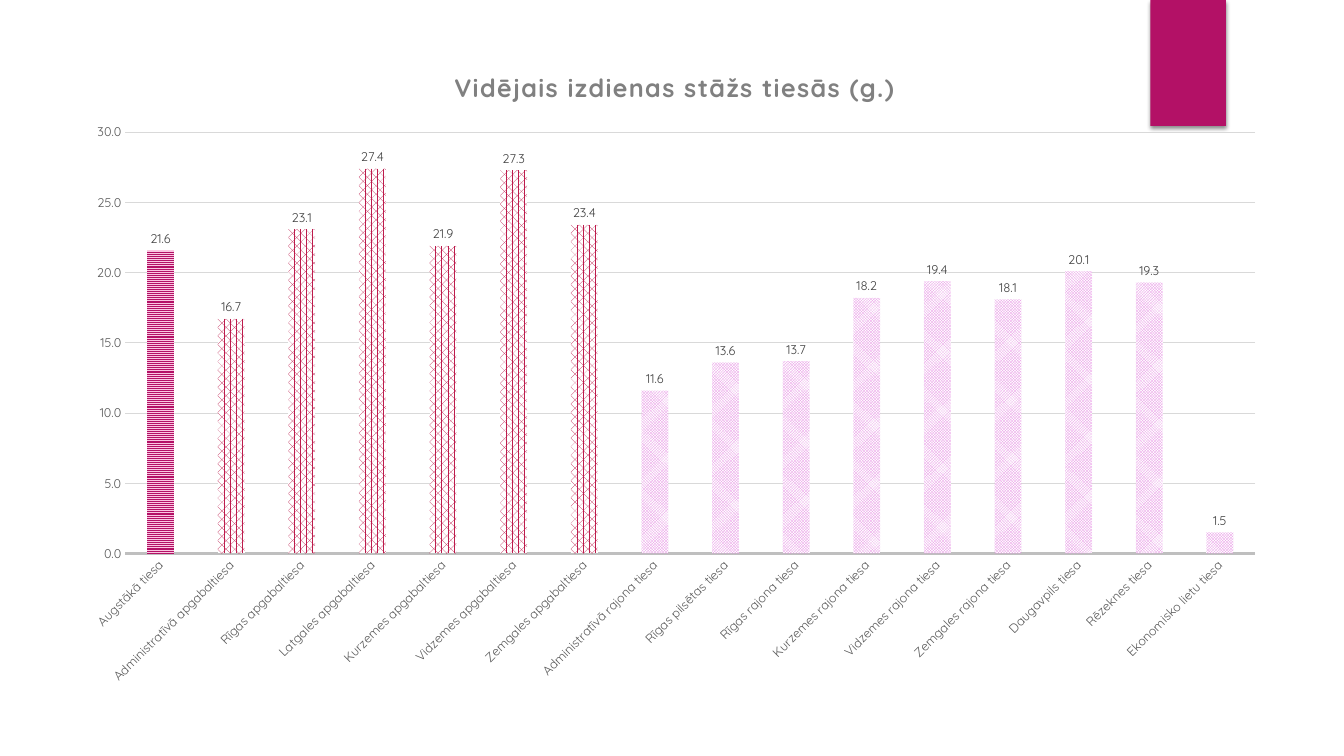
from pptx import Presentation
from pptx.chart.data import CategoryChartData
from pptx.dml.color import RGBColor
from pptx.enum.chart import XL_CHART_TYPE, XL_LABEL_POSITION, XL_TICK_MARK
from pptx.enum.dml import MSO_PATTERN
from pptx.enum.shapes import MSO_SHAPE
from pptx.oxml import parse_xml
from pptx.oxml.ns import nsdecls
from pptx.util import Inches, Pt

COLUMN = XL_CHART_TYPE.COLUMN_CLUSTERED
OUTSIDE = XL_LABEL_POSITION.OUTSIDE_END
NO_TICK = XL_TICK_MARK.NONE
LINES = MSO_PATTERN.NARROW_HORIZONTAL
DOTS = MSO_PATTERN.PERCENT_60
CHECKS = MSO_PATTERN.SMALL_CHECKER_BOARD

FONT = "Quicksand"
COLORS = {
    "accent": "B31166", "blush": "FAC6E1", "red": "BD1B4C", "pink": "E68BE3",
    "white": "FFFFFF", "black": "000000", "title": "808080", "axis": "595959",
    "label": "404040", "base": "BFBFBF", "grid": "D9D9D9",
}
TITLE = "Vidējais izdienas stāžs tiesās (g.)"
# Each group of courts: pattern, front colour, back colour, (court, years)
GROUPS = [
    (LINES, "accent", "blush", [("Augstākā tiesa", 21.6)]),
    (DOTS, "red", "white", [
        ("Administratīvā apgabaltiesa", 16.7),
        ("Rīgas apgabaltiesa", 23.1),
        ("Latgales apgabaltiesa", 27.4),
        ("Kurzemes apgabaltiesa", 21.9),
        ("Vidzemes apgabaltiesa", 27.3),
        ("Zemgales apgabaltiesa", 23.4),
    ]),
    (CHECKS, "pink", "white", [
        ("Administratīvā rajona tiesa", 11.6),
        ("Rīgas pilsētas tiesa", 13.6),
        ("Rīgas rajona tiesa", 13.7),
        ("Kurzemes rajona tiesa", 18.2),
        ("Vidzemes rajona tiesa", 19.4),
        ("Zemgales rajona tiesa", 18.1),
        ("Daugavpils tiesa", 20.1),
        ("Rēzeknes tiesa", 19.3),
        ("Ekonomisko lietu tiesa", 1.5),
    ]),
]
PLOT = {"x": 0.046, "y": 0.132, "w": 0.934, "h": 0.647}


def rgb(name):
    return RGBColor.from_string(COLORS[name])


def style(font, size, color, bold=False):
    font.name, font.size, font.bold = FONT, Pt(size), bold
    font.color.rgb = rgb(color)


def rule(line, color, width):
    line.color.rgb = rgb(color)
    line.width = Pt(width)


def hatch(fill, pattern, front, back):
    fill.patterned()
    fill.pattern = pattern
    fill.fore_color.rgb = rgb(front)
    fill.back_color.rgb = rgb(back)


def add_tab(slide):
    tab = slide.shapes.add_shape(
        MSO_SHAPE.RECTANGLE, Inches(11.41), 0, Inches(0.75), Inches(1.25))
    tab.fill.solid()
    tab.fill.fore_color.rgb = rgb("accent")
    tab.line.fill.background()
    tab.shadow.inherit = False
    tab._element.spPr.remove(tab._element.spPr[-1])
    tab._element.spPr.append(parse_xml(
        f'<a:effectLst {nsdecls("a")}><a:outerShdw blurRad="{Pt(3)}" '
        f'dist="{Pt(2)}" dir="5400000" rotWithShape="0"><a:srgbClr '
        f'val="{COLORS["black"]}"><a:alpha val="45000"/></a:srgbClr>'
        '</a:outerShdw></a:effectLst>'))


def place_plot(chart):
    """Fix the inner plot area and make the chart background clear."""
    area = chart._chartSpace.chart.plotArea
    for old in area.findall("{*}layout"):
        area.remove(old)
    sizes = "".join(f'<c:{k} val="{v}"/>' for k, v in PLOT.items())
    area.insert(0, parse_xml(
        f'<c:layout {nsdecls("c")}><c:manualLayout>'
        '<c:layoutTarget val="inner"/><c:xMode val="edge"/>'
        f'<c:yMode val="edge"/>{sizes}</c:manualLayout></c:layout>'))
    chart._chartSpace.chart.addnext(parse_xml(
        f'<c:spPr {nsdecls("c", "a")}><a:noFill/>'
        '<a:ln><a:noFill/></a:ln></c:spPr>'))


def add_chart(slide):
    data = CategoryChartData(number_format="0.0")
    courts = [court for group in GROUPS for court in group[3]]
    data.categories = [name for name, _ in courts]
    data.add_series(TITLE, [years for _, years in courts])
    chart = slide.shapes.add_chart(
        COLUMN, Inches(0.69), Inches(0.46), Inches(12), Inches(6.46),
        data).chart
    style(chart.font, 10, "black")
    chart.has_legend = False
    chart.has_title = True
    para = chart.chart_title.text_frame.paragraphs[0]
    para.text = TITLE
    run = para.runs[0]
    style(run.font, 18, "title", True)
    run._r.get_or_add_rPr().set("spc", "100")

    cats, vals = chart.category_axis, chart.value_axis
    for axis in (cats, vals):
        axis.major_tick_mark = axis.minor_tick_mark = NO_TICK
        style(axis.tick_labels.font, 9, "axis")
    rule(cats.format.line, "base", 1.5)
    cats._element.txPr.bodyPr.set("rot", "-2700000")
    vals.format.line.fill.background()
    rule(vals.major_gridlines.format.line, "grid", 0.75)
    vals.minimum_scale, vals.maximum_scale, vals.major_unit = 0, 30, 5
    vals.tick_labels.number_format = "0.0"
    vals.tick_labels.number_format_is_linked = False

    plot = chart.plots[0]
    plot.vary_by_categories = False
    plot.gap_width, plot.overlap = 164, -22
    bars = plot.series[0]
    bars.invert_if_negative = False
    hatch(bars.format.fill, *GROUPS[0][:3])
    start = len(GROUPS[0][3])
    for *look, group in GROUPS[1:]:
        for i in range(start, start + len(group)):
            hatch(bars.points[i].format.fill, *look)
        start += len(group)

    plot.has_data_labels = True
    labels = plot.data_labels
    labels.show_value = True
    labels.position = OUTSIDE
    labels.number_format = "0.0"
    labels.number_format_is_linked = False
    style(labels.font, 9, "label")
    place_plot(chart)


def main():
    deck = Presentation()
    deck.slide_width, deck.slide_height = Inches(13.33), Inches(7.5)
    slide = deck.slides.add_slide(deck.slide_layouts[6])
    add_tab(slide)
    add_chart(slide)
    deck.save("out.pptx")


if __name__ == "__main__":
    main()
